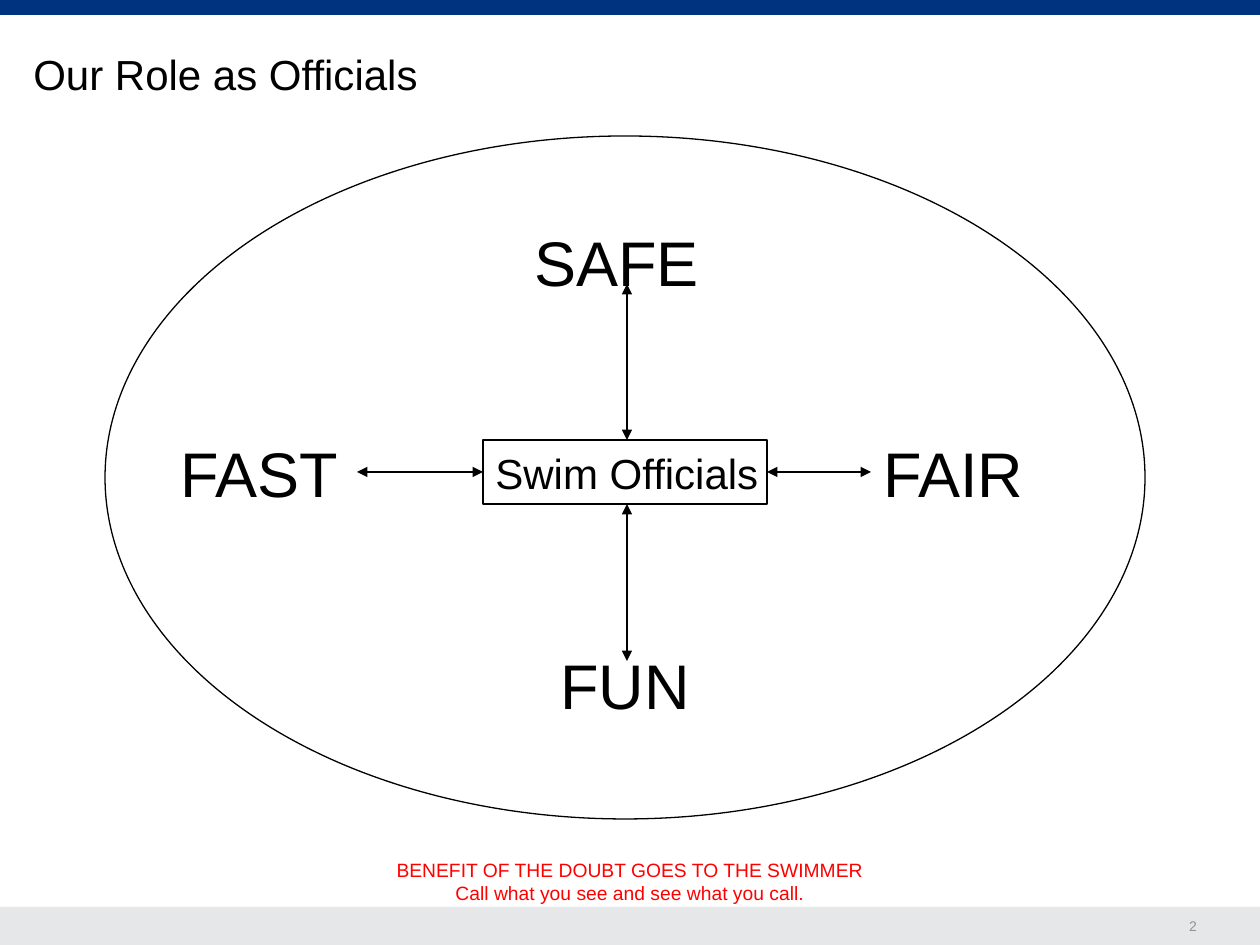
from dataclasses import dataclass

from pptx import Presentation
from pptx.dml.color import RGBColor
from pptx.enum.shapes import MSO_CONNECTOR as Connector, MSO_SHAPE as Shape
from pptx.enum.text import MSO_AUTO_SIZE as AutoSize, PP_ALIGN as Align
from pptx.oxml.ns import qn
from pptx.util import Pt
from lxml.etree import SubElement

EMU_PER_PX = 914400 / 126


@dataclass(frozen=True)
class Theme:
    font: str = "Arial"
    black: RGBColor = RGBColor(0, 0, 0)
    red: RGBColor = RGBColor(255, 0, 0)
    navy: RGBColor = RGBColor(0, 0x33, 0x7F)
    band_gray: RGBColor = RGBColor(0xE6, 0xE7, 0xE8)
    number_gray: RGBColor = RGBColor(0x91, 0x93, 0x96)
    heading: int = 24
    goal: int = 36
    motto: int = 11
    number: int = 8
    line: float = 0.75


theme = Theme()


def px(*lengths):
    return [round(length * EMU_PER_PX) for length in lengths]


def add_text(box, lines, size, color=theme.black, align=Align.LEFT, inset=True):
    shape = slide.shapes.add_textbox(*px(*box))
    frame = shape.text_frame
    frame.word_wrap = True
    frame.auto_size = AutoSize.SHAPE_TO_FIT_TEXT
    if not inset:
        frame.margin_left = frame.margin_right = 0
        frame.margin_top = frame.margin_bottom = 0
    frame.text = "\n".join(lines)
    for paragraph in frame.paragraphs:
        paragraph.alignment = align
        paragraph.font.name = theme.font
        paragraph.font.size = Pt(size)
        paragraph.font.color.rgb = color


presentation = Presentation()
presentation.slide_width, presentation.slide_height = px(1260, 945)
slide = presentation.slides.add_slide(presentation.slide_layouts[6])

# Footer and header bands
for top, height, color in [(907, 38, theme.band_gray), (0, 15, theme.navy)]:
    band = slide.shapes.add_shape(Shape.RECTANGLE, *px(0, top, 1260, height))
    band.shadow.inherit = False
    band.fill.solid()
    band.fill.fore_color.rgb = color
    band.line.fill.background()
add_text((1018, 917, 179, 16), ["2"], theme.number, theme.number_gray,
         Align.RIGHT, inset=False)

# Centre label and the four goals around it
add_text((483, 441, 294, 63), ["Swim Officials"], theme.heading)
for goal, left, top, width in [
    ("SAFE", 522, 217, 210),
    ("FUN", 548, 640, 158),
    ("FAST", 168, 428, 189),
    ("FAIR", 871, 428, 190),
]:
    add_text((left, top, width, 89), [goal], theme.goal)

# Outlines: the surrounding ellipse and the centre box
outlines = []
for kind, box in [
    (Shape.OVAL, (105, 136, 1040, 683)),
    (Shape.RECTANGLE, (483, 440, 284, 64)),
]:
    outline = slide.shapes.add_shape(kind, *px(*box))
    outline.shadow.inherit = False
    outline.fill.background()
    outline.line.color.rgb = theme.black
    outline.line.width = Pt(theme.line)
    outlines.append(outline)
center_box = outlines[1]

# Double arrows from the centre box; the vertical pair sits just right of its middle
for start, end, side in [
    ((627, 440), (627, 284), None),
    ((627, 504), (627, 661), None),
    ((483, 472), (357, 472), 1),
    ((767, 472), (871, 472), 3),
]:
    arrow = slide.shapes.add_connector(Connector.STRAIGHT, *px(*start, *end))
    if side is not None:
        arrow.begin_connect(center_box, side)
    arrow.line.color.rgb = theme.black
    arrow.line.width = Pt(theme.line)
    line = arrow.line._get_or_add_ln()
    for tip in ("a:headEnd", "a:tailEnd"):
        SubElement(line, qn(tip), type="triangle")
    SubElement(arrow._element.spPr, qn("a:effectLst"))

# Motto and title
add_text((378, 852, 504, 59),
         ["BENEFIT OF THE DOUBT GOES TO THE SWIMMER",
          "Call what you see and see what you call."],
         theme.motto, theme.red, Align.CENTER)
add_text((21, 42, 1144, 63), ["Our Role as Officials"], theme.heading)

presentation.save("out.pptx")
